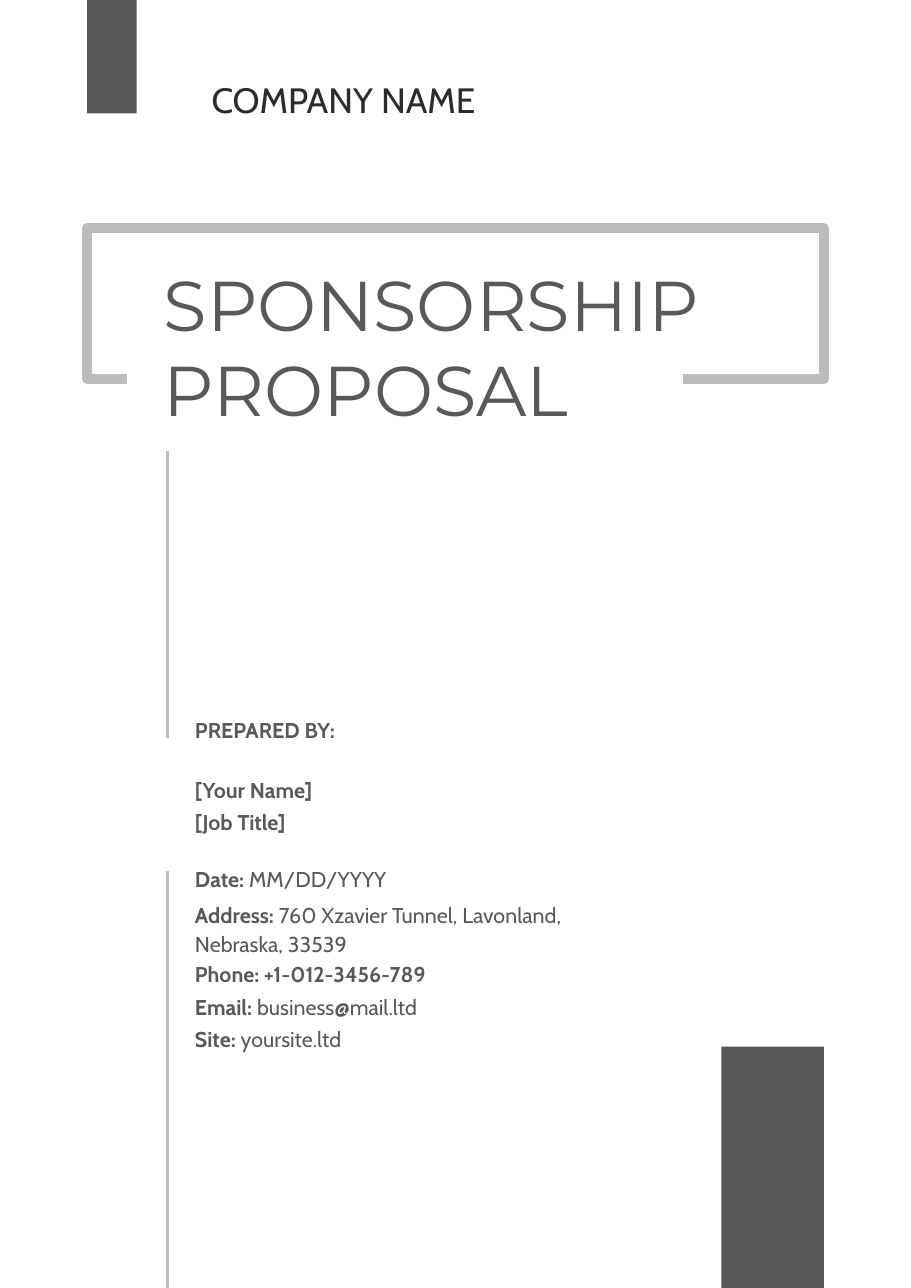
from lxml.etree import SubElement
from pptx import Presentation
from pptx.dml.color import RGBColor
from pptx.enum.shapes import MSO_CONNECTOR, MSO_SHAPE
from pptx.enum.text import MSO_ANCHOR, PP_ALIGN
from pptx.oxml.ns import qn
from pptx.util import Inches, Pt

PAGE_WIDTH, PAGE_HEIGHT = 8.27, 11.69
DARK, TEXT, HEADING, RULE = "565856", "595959", "2B2C2B", "BBBCBB"

# Top offset, height and paragraphs of (bold label, regular value)
CONTACT_LINES = [
    (0, 0.24, [("PREPARED BY:", "")]),
    (0.54, 0.24, [("[Your Name]", "")]),
    (0.83, 0.24, [("[Job Title]", "")]),
    (1.35, 0.24, [("Date: ", "MM/DD/YYYY")]),
    (1.64, 0.51, [("Address: ", "760 Xzavier Tunnel, Lavonland,"),
                  ("", "Nebraska, 33539")]),
    (2.21, 0.24, [("Phone: +1-012-3456-789", "")]),
    (2.51, 0.24, [("Email: ", "business@mail.ltd")]),
    (2.8, 0.24, [("Site: ", "yoursite.ltd")]),
]


def color(value):
    return RGBColor.from_string(value)


def add_block(page, left, top, width, height):
    block = page.shapes.add_shape(MSO_SHAPE.RECTANGLE, Inches(left), Inches(top),
                                  Inches(width), Inches(height))
    block.shadow.inherit = False
    block.fill.solid()
    block.fill.fore_color.rgb = color(DARK)
    block.line.fill.background()


def add_text(page, left, top, width, height, paragraphs, font, size, ink,
             margin=0, spacing=None):
    """Each paragraph is a list of (text, bold) runs."""
    box = page.shapes.add_textbox(Inches(left), Inches(top),
                                  Inches(width), Inches(height))
    frame = box.text_frame
    frame.word_wrap = True
    frame.vertical_anchor = MSO_ANCHOR.TOP
    frame.margin_left = frame.margin_right = Inches(margin)
    frame.margin_top = frame.margin_bottom = Inches(margin)
    for index, runs in enumerate(paragraphs):
        para = frame.add_paragraph() if index else frame.paragraphs[0]
        para.alignment = PP_ALIGN.LEFT
        if spacing:
            para.line_spacing = spacing
        for text, bold in runs:
            span = para.add_run()
            span.text = text
            span.font.name = font
            span.font.size = Pt(size)
            span.font.bold = bold
            span.font.color.rgb = color(ink)


def add_rule(page, left, top, bottom):
    rule = page.shapes.add_connector(MSO_CONNECTOR.STRAIGHT, Inches(left),
                                     Inches(top), Inches(left), Inches(bottom))
    rule.line.color.rgb = color(RULE)
    rule.line.width = Pt(1.5)
    SubElement(rule._element.spPr, qn("a:effectLst"))


def add_header(page, left, top):
    add_block(page, left, top, 0.45, 1.03)
    add_text(page, left + 1.13, top + 0.71, 2.95, 0.39,
             [[("COMPANY NAME", False)]], "Cabin", 23, HEADING)


def add_title(page, left, top, width, height):
    """Title inside a frame whose bottom edge is open."""
    right, bottom = left + width, top + height
    corners = [(left, bottom), (left, top), (right, top), (right, bottom),
               (right - 1.28, bottom)]
    builder = page.shapes.build_freeform(Inches(left + 0.36), Inches(bottom), 1.0)
    builder.add_line_segments([(Inches(x), Inches(y)) for x, y in corners],
                              close=False)
    outline = builder.convert_to_shape()
    outline.shadow.inherit = False
    outline.fill.background()
    outline.line.color.rgb = color(RULE)
    outline.line.width = Pt(6)
    SubElement(outline.line._get_or_add_ln(), qn("a:round"))
    add_text(page, left + 0.6, top + 0.2, 5.6, 1.75,
             [[("SPONSORSHIP", False)], [("PROPOSAL", False)]],
             "Montserrat", 46, TEXT, margin=0.1)


def add_contact(page, left, top, width):
    for offset, height, lines in CONTACT_LINES:
        paragraphs = [[(text, bold) for text, bold in ((label, True), (value, False))
                       if text] for label, value in lines]
        add_text(page, left, top + offset, width, height, paragraphs, "Cabin", 14,
                 TEXT, spacing=1.15 if len(lines) > 1 else None)


def add_accents(page, left, right, bottom):
    add_rule(page, left, 4.09, 6.7)
    add_rule(page, left, 7.91, bottom)
    add_block(page, right - 0.93, bottom - 2.19, 0.93, 2.19)


def main():
    deck = Presentation()
    deck.slide_width, deck.slide_height = Inches(PAGE_WIDTH), Inches(PAGE_HEIGHT)
    page = deck.slides.add_slide(deck.slide_layouts[6])
    add_header(page, 0.79, 0)
    add_title(page, 0.79, 2.07, 6.69, 1.37)
    add_contact(page, 1.77, 6.51, 4.58)
    add_accents(page, 1.52, 7.48, PAGE_HEIGHT)
    deck.save("out.pptx")


if __name__ == "__main__":
    main()
